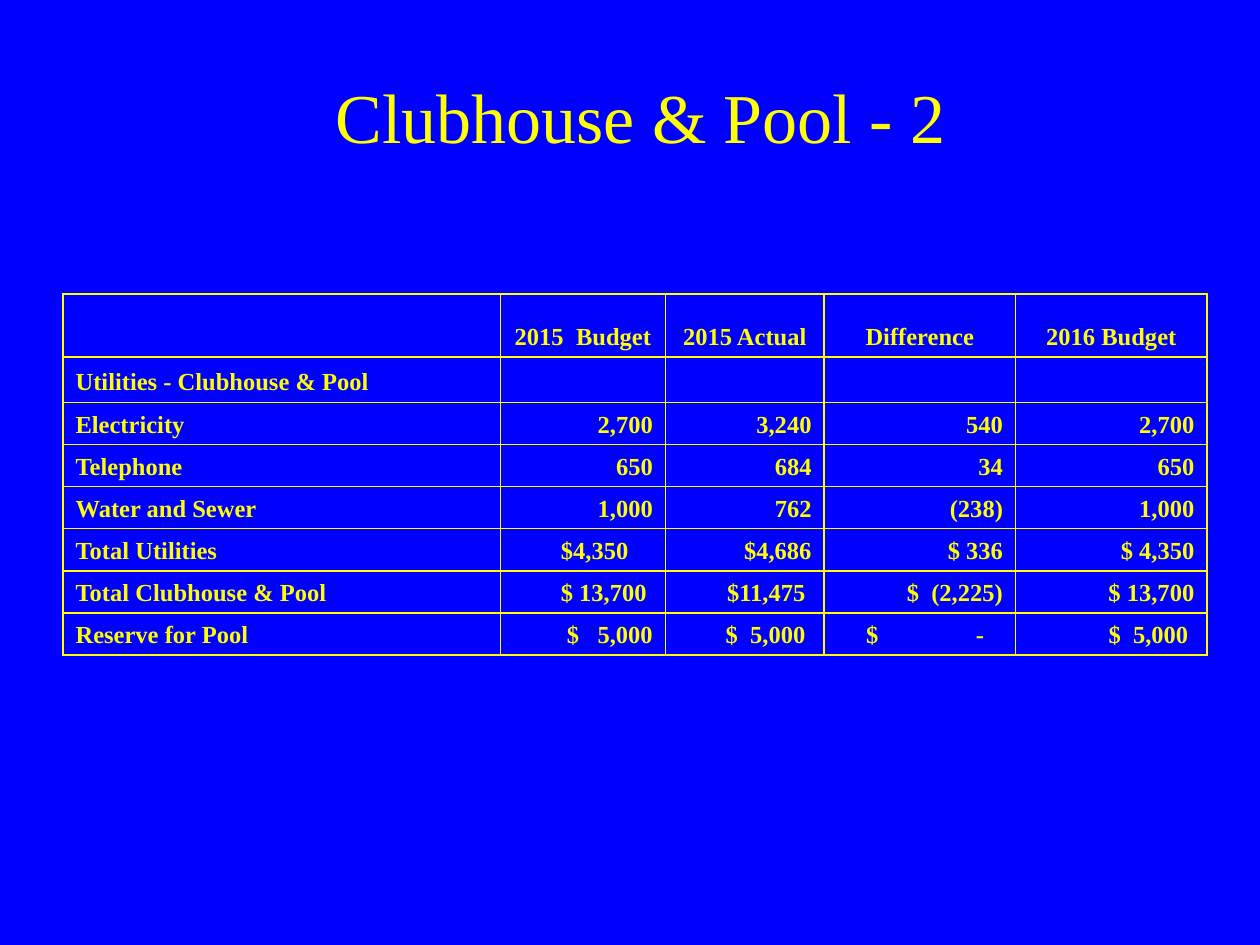
from dataclasses import dataclass

from lxml.etree import SubElement
from pptx import Presentation
from pptx.dml.color import RGBColor
from pptx.enum.text import MSO_ANCHOR, PP_ALIGN
from pptx.oxml.ns import qn
from pptx.table import _Cell
from pptx.text.text import _Paragraph
from pptx.util import Pt

COLORS = {"back": "0000FF", "ink": "FFFF00"}
FONT = "Times New Roman"
SIZE = 14
PAD = 7.2
WIDTHS = [250, 94.3, 90.7, 109.4, 109.4]
HEIGHTS = [36, 26] + [22.7] * 6


@dataclass
class Entry:
    text: str
    right: float = 0  # extra space after the text
    left: float = 0  # extra space before the text
    tab: float = 0  # right tab stop; the text is then set flush left


ROWS = [
    ["", "2015  Budget", "2015 Actual", "Difference", "2016 Budget"],
    ["Utilities - Clubhouse & Pool", "", "", "", ""],
    ["Electricity", "2,700", "3,240", "540", "2,700"],
    ["Telephone", "650", "684", "34", "650"],
    ["Water and Sewer", "1,000", "762", "(238)", "1,000"],
    ["Total Utilities", Entry("$4,350", right=14), "$4,686", "$ 336", "$ 4,350"],
    ["Total Clubhouse & Pool", Entry("$ 13,700", right=3.5),
     Entry("$11,475", right=3.5), "$  (2,225)", "$ 13,700"],
    ["Reserve for Pool", "$   5,000", Entry("$  5,000", right=3.5),
     Entry("$\t-", left=16.8, tab=67.4), Entry("$  5,000", right=3.5)],
]


def add_run(para: _Paragraph, text: str, size: float, bold: bool) -> None:
    run = para.add_run()
    run.text = text
    font = run.font
    font.name, font.size, font.bold = FONT, Pt(size), bold
    font.color.rgb = RGBColor.from_string(COLORS["ink"])


def add_rules(cell: _Cell) -> None:
    """Draw a thin line on all four sides of the cell."""
    props = cell._tc.get_or_add_tcPr()
    for side in ("lnL", "lnR", "lnT", "lnB"):
        line = SubElement(props, qn(f"a:{side}"), w=str(Pt(1)))
        fill = SubElement(line, qn("a:solidFill"))
        SubElement(fill, qn("a:srgbClr"), val=COLORS["ink"])


def add_tab(para: _Paragraph, stop: float) -> None:
    tabs = SubElement(para._p.get_or_add_pPr(), qn("a:tabLst"))
    SubElement(tabs, qn("a:tab"), pos=str(Pt(stop)), algn="r")


def fill_cell(cell: _Cell, entry: Entry, align: PP_ALIGN) -> None:
    add_rules(cell)
    cell.fill.background()
    cell.vertical_anchor = MSO_ANCHOR.BOTTOM
    cell.margin_left = Pt(PAD + entry.left)
    cell.margin_right = Pt(PAD + entry.right)
    para = cell.text_frame.paragraphs[0]
    para.alignment = PP_ALIGN.LEFT if entry.tab else align
    if entry.tab:
        add_tab(para, entry.tab)
    if entry.text:
        add_run(para, entry.text, SIZE, True)
    else:
        # Keeps an empty cell from stretching its row
        SubElement(para._p, qn("a:endParaRPr"), sz=str(SIZE * 100))


def pick_align(row: int, col: int) -> PP_ALIGN:
    if col == 0:
        return PP_ALIGN.LEFT
    return PP_ALIGN.CENTER if row == 0 else PP_ALIGN.RIGHT


def add_title(slide, text: str) -> None:
    box = slide.shapes.add_textbox(Pt(60), Pt(42), Pt(612), Pt(48))
    frame = box.text_frame
    frame.word_wrap = True
    frame.vertical_anchor = MSO_ANCHOR.MIDDLE
    para = frame.paragraphs[0]
    para.alignment = PP_ALIGN.CENTER
    add_run(para, text, 40, False)


def add_budget(slide) -> None:
    table = slide.shapes.add_table(
        len(HEIGHTS), len(WIDTHS), Pt(36), Pt(168),
        Pt(sum(WIDTHS)), Pt(sum(HEIGHTS))).table
    table.first_row = table.horz_banding = False
    for column, width in zip(table.columns, WIDTHS):
        column.width = Pt(width)
    for row, height in zip(table.rows, HEIGHTS):
        row.height = Pt(height)
    for r, items in enumerate(ROWS):
        for c, item in enumerate(items):
            entry = item if isinstance(item, Entry) else Entry(item)
            fill_cell(table.cell(r, c), entry, pick_align(r, c))


def main() -> None:
    deck = Presentation()
    deck.slide_width, deck.slide_height = Pt(720), Pt(540)
    slide = deck.slides.add_slide(deck.slide_layouts[6])
    back = slide.background.fill
    back.solid()
    back.fore_color.rgb = RGBColor.from_string(COLORS["back"])
    add_title(slide, "Clubhouse & Pool - 2")
    add_budget(slide)
    deck.save("out.pptx")


if __name__ == "__main__":
    main()
